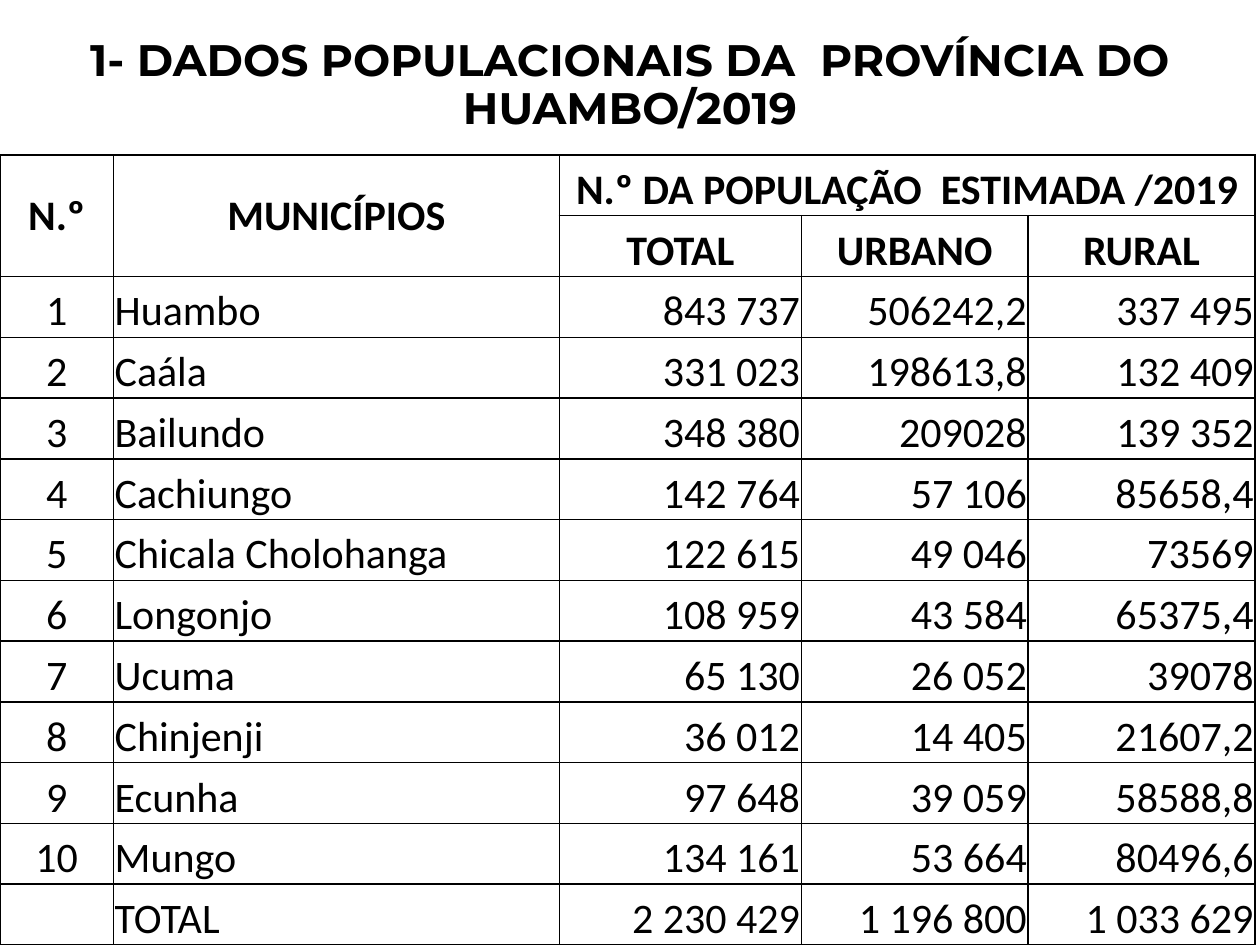
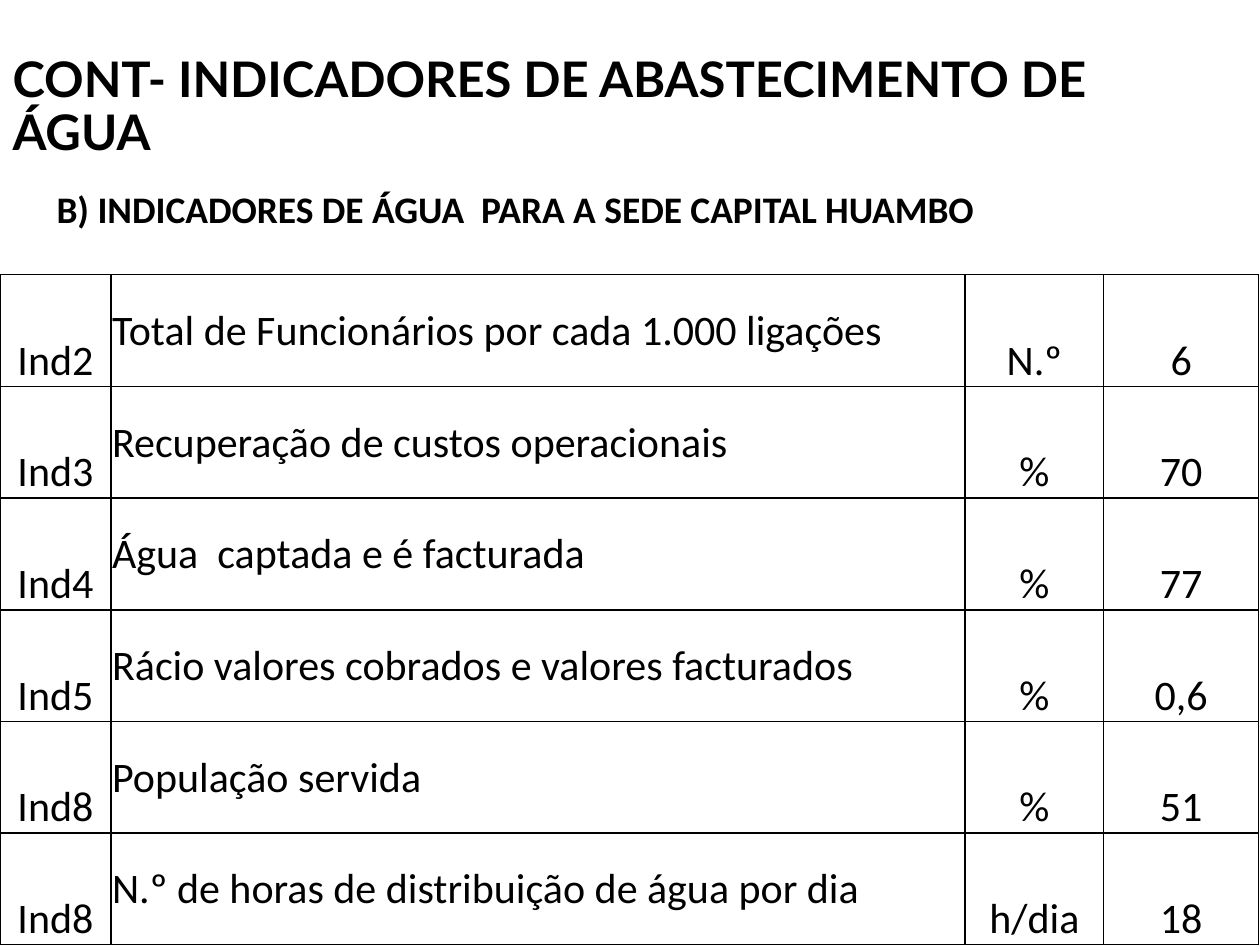
from dataclasses import dataclass
from typing import NamedTuple

from lxml.etree import SubElement
from pptx import Presentation
from pptx.dml.color import RGBColor
from pptx.enum.text import MSO_ANCHOR, MSO_AUTO_SIZE, PP_ALIGN
from pptx.oxml.ns import qn
from pptx.util import Inches, Pt


@dataclass(frozen=True)
class Theme:
    ink: RGBColor = RGBColor(0x00, 0x00, 0x00)
    paper: RGBColor = RGBColor(0xFF, 0xFF, 0xFF)
    body_font: str = "Calibri"
    cell_size: float = 24
    subtitle_size: float = 21.4
    border: float = 1
    line_spacing: float = 0.9


class Box(NamedTuple):
    left: float
    top: float
    width: float
    height: float

    def lengths(self) -> list:
        return [Inches(value) for value in self]


class Heading(NamedTuple):
    text: str
    box: Box
    font: str
    size: float
    align: PP_ALIGN
    bottom_inset: float = 0.05


class Column(NamedTuple):
    width: float
    align: PP_ALIGN
    anchor: MSO_ANCHOR = MSO_ANCHOR.BOTTOM


@dataclass(frozen=True)
class Grid:
    box: Box
    columns: list
    rows: list
    header_rows: int = 0
    merges: tuple = ()  # (first row, first column, last row, last column)


THEME = Theme()
LEFT, CENTER, RIGHT = PP_ALIGN.LEFT, PP_ALIGN.CENTER, PP_ALIGN.RIGHT

# Content: population of the province
POPULATION_HEADING = Heading(
    "1- DADOS POPULACIONAIS DA  PROVÍNCIA DO HUAMBO/2019",
    Box(0.5, 0.3, 9, 0.77), "Montserrat", 25.2, CENTER)
POPULATION = Grid(
    Box(0, 1.23, 9.96, 6.27),
    [Column(0.9, CENTER), Column(3.54, LEFT), Column(1.92, RIGHT),
     Column(1.8, RIGHT), Column(1.8, RIGHT)],
    [("N.º", "MUNICÍPIOS", "N.º DA POPULAÇÃO  ESTIMADA /2019", "", ""),
     ("", "", "TOTAL", "URBANO", "RURAL"),
     ("1", "Huambo", "843 737", "506242,2", "337 495"),
     ("2", "Caála", "331 023", "198613,8", "132 409"),
     ("3", "Bailundo", "348 380", "209028", "139 352"),
     ("4", "Cachiungo", "142 764", "57 106", "85658,4"),
     ("5", "Chicala Cholohanga", "122 615", "49 046", "73569"),
     ("6", "Longonjo", "108 959", "43 584", "65375,4"),
     ("7", "Ucuma", "65 130", "26 052", "39078"),
     ("8", "Chinjenji", "36 012", "14 405", "21607,2"),
     ("9", "Ecunha", "97 648", "39 059", "58588,8"),
     ("10", "Mungo", "134 161", "53 664", "80496,6"),
     ("", "TOTAL", "2 230 429", "1 196 800", "1 033 629")],
    header_rows=2,
    merges=((0, 0, 1, 0), (0, 1, 1, 1), (0, 2, 0, 4)))

# Content: water indicators
WATER_HEADING = Heading(
    "CONT- INDICADORES DE ABASTECIMENTO DE  ÁGUA",
    Box(0, 0.29, 9.88, 1.56), "Lato", 28, LEFT, bottom_inset=0.47)
WATER_SUBTITLE = Heading(
    "B) INDICADORES DE ÁGUA  PARA A SEDE CAPITAL HUAMBO",
    Box(0.35, 1.47, 9.45, 0.71), THEME.body_font, THEME.subtitle_size, LEFT)
WATER = Grid(
    Box(0, 2.18, 10, 5.32),
    [Column(0.88, CENTER), Column(6.78, LEFT, MSO_ANCHOR.MIDDLE),
     Column(1.1, CENTER), Column(1.23, CENTER)],
    [("Ind2", "Total de Funcionários por cada 1.000 ligações", "N.º", "6"),
     ("Ind3", "Recuperação de custos operacionais", "%", "70"),
     ("Ind4", "Água  captada e é facturada", "%", "77"),
     ("Ind5", "Rácio valores cobrados e valores facturados", "%", "0,6"),
     ("Ind8", "População servida", "%", "51"),
     ("Ind8", "N.º de horas de distribuição de água por dia", "h/dia", "18")])


def format_runs(paragraph, font: str, size: float, bold: bool) -> None:
    for run in paragraph.runs:
        run.font.name = font
        run.font.size = Pt(size)
        run.font.bold = bold
        run.font.color.rgb = THEME.ink


def write_heading(shape, heading: Heading, anchor: MSO_ANCHOR) -> None:
    shape.left, shape.top, shape.width, shape.height = heading.box.lengths()
    frame = shape.text_frame
    frame.text = heading.text
    frame.word_wrap = True
    frame.auto_size = MSO_AUTO_SIZE.NONE
    frame.vertical_anchor = anchor
    frame.margin_bottom = Inches(heading.bottom_inset)
    paragraph = frame.paragraphs[0]
    paragraph.alignment = heading.align
    paragraph.line_spacing = THEME.line_spacing
    format_runs(paragraph, heading.font, heading.size, True)


def add_borders(cell) -> None:
    properties = cell._tc.get_or_add_tcPr()
    for side in ("a:lnL", "a:lnR", "a:lnT", "a:lnB"):
        line = SubElement(properties, qn(side), w=str(Pt(THEME.border)))
        fill = SubElement(line, qn("a:solidFill"))
        SubElement(fill, qn("a:srgbClr"), val=str(THEME.ink))


def write_cell(cell, text: str, column: Column, header: bool, merged_down: bool) -> None:
    add_borders(cell)
    cell.fill.solid()
    cell.fill.fore_color.rgb = THEME.paper
    cell.margin_left = cell.margin_right = cell.margin_top = Inches(0.01)
    cell.margin_bottom = 0
    cell.vertical_anchor = MSO_ANCHOR.MIDDLE if merged_down else column.anchor
    if text:
        cell.text_frame.text = text
        paragraph = cell.text_frame.paragraphs[0]
        paragraph.alignment = CENTER if header else column.align
        format_runs(paragraph, THEME.body_font, THEME.cell_size, header)


def draw_grid(slide, grid: Grid) -> None:
    table = slide.shapes.add_table(
        len(grid.rows), len(grid.columns), *grid.box.lengths()).table
    table.first_row = table.horz_banding = False
    for table_column, column in zip(table.columns, grid.columns):
        table_column.width = Inches(column.width)
    for table_row in table.rows:
        table_row.height = Inches(grid.box.height / len(grid.rows))
    for top, left, bottom, right in grid.merges:
        table.cell(top, left).merge(table.cell(bottom, right))
    for r, row in enumerate(grid.rows):
        for c, (text, column) in enumerate(zip(row, grid.columns)):
            cell = table.cell(r, c)
            merged_down = cell.is_merge_origin and cell.span_height > 1
            write_cell(cell, text, column, r < grid.header_rows, merged_down)


def add_titled_slide(deck, heading: Heading):
    slide = deck.slides.add_slide(deck.slide_layouts[5])
    slide.background.fill.solid()
    slide.background.fill.fore_color.rgb = THEME.paper
    write_heading(slide.shapes.title, heading, MSO_ANCHOR.MIDDLE)
    return slide


def main() -> None:
    deck = Presentation()
    deck.slide_width, deck.slide_height = Inches(10), Inches(7.5)

    # Population slide
    population = add_titled_slide(deck, POPULATION_HEADING)
    draw_grid(population, POPULATION)

    # Water indicators slide
    water = add_titled_slide(deck, WATER_HEADING)
    subtitle = water.shapes.add_textbox(*WATER_SUBTITLE.box.lengths())
    write_heading(subtitle, WATER_SUBTITLE, MSO_ANCHOR.TOP)
    draw_grid(water, WATER)

    deck.save("out.pptx")


if __name__ == "__main__":
    main()
